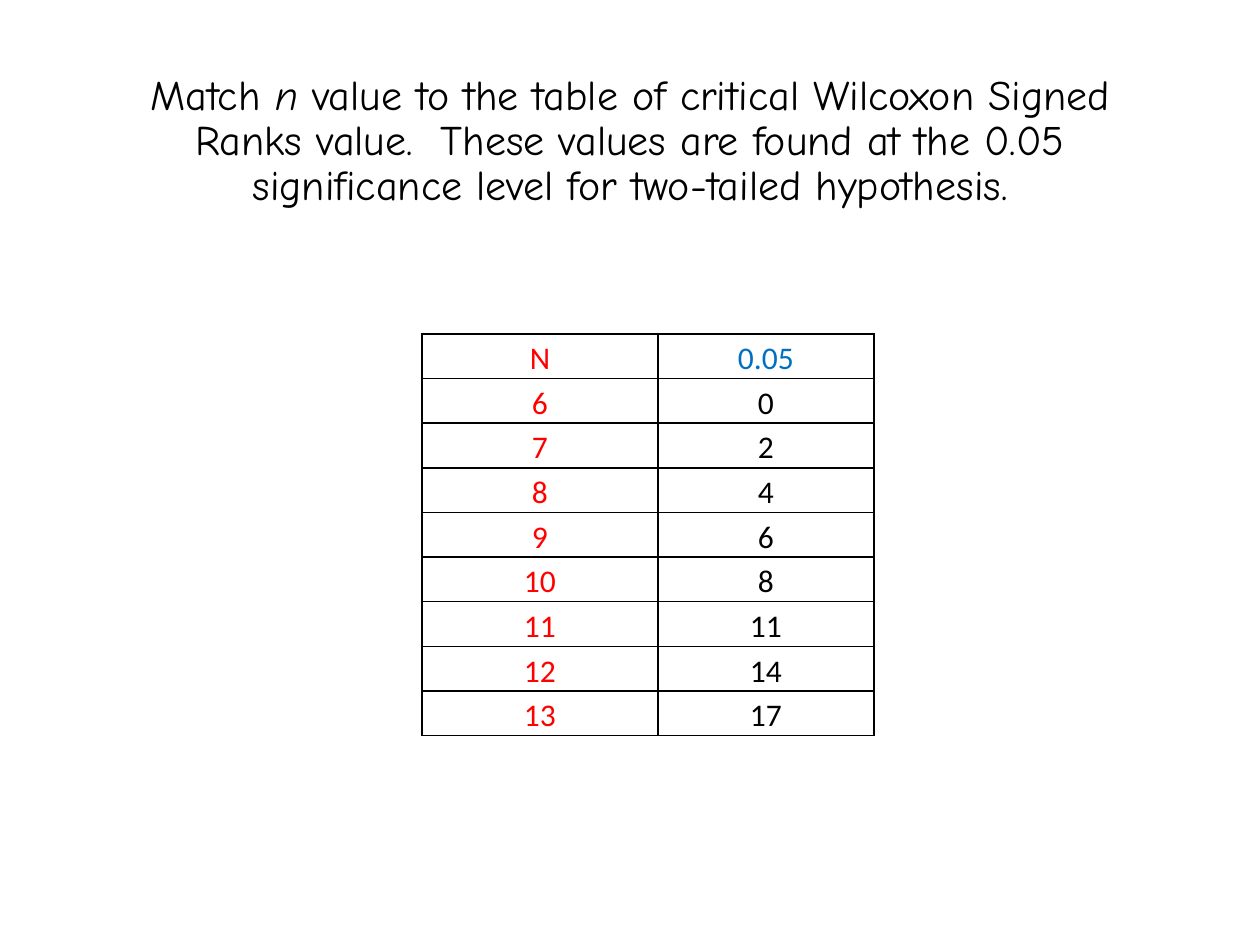
from lxml import etree
from pptx import Presentation
from pptx.dml import color
from pptx.enum import text
from pptx.oxml import ns
from pptx.util import Cm, Pt

COLORS = {"black": "000000", "red": "FF0000", "blue": "0070C0", "white": "FFFFFF"}
CRITICAL_VALUES = [
    ("N", "0.05"),
    ("6", "0"),
    ("7", "2"),
    ("8", "4"),
    ("9", "6"),
    ("10", "8"),
    ("11", "11"),
    ("12", "14"),
    ("13", "17"),
]


def rgb(name):
    return color.RGBColor.from_string(COLORS[name])


def write(para, words, font="Calibri", size=18, tint="black", italic=False):
    span = para.add_run()
    span.text = words
    span.font.name = font
    span.font.size = Pt(size)
    span.font.italic = italic
    span.font.color.rgb = rgb(tint)


def center(para, spacing):
    para.alignment = text.PP_ALIGN.CENTER
    para.line_spacing = spacing


def add_borders(cell, tint="black", width=1):
    properties = cell._tc.get_or_add_tcPr()
    for index, side in enumerate(("lnL", "lnR", "lnT", "lnB")):
        line = etree.Element(ns.qn(f"a:{side}"), w=str(Pt(width)))
        fill = etree.SubElement(line, ns.qn("a:solidFill"))
        etree.SubElement(fill, ns.qn("a:srgbClr"), val=COLORS[tint])
        properties.insert(index, line)


def add_title(page, left, top, width, height):
    box = page.shapes.add_textbox(Cm(left), Cm(top), Cm(width), Cm(height))
    frame = box.text_frame
    frame.word_wrap = True
    frame.vertical_anchor = text.MSO_ANCHOR.MIDDLE
    para = frame.paragraphs[0]
    center(para, 0.9)
    style = {"font": "Comic Neue", "size": 24}
    write(para, "Match ", **style)
    write(para, "n", italic=True, **style)
    write(
        para,
        " value to the table of critical Wilcoxon Signed Ranks value.  These values "
        "are found at the 0.05 significance level for two-tailed hypothesis.",
        **style,
    )


def add_critical_table(page, left, top, widths, row_height):
    row_count = len(CRITICAL_VALUES)
    table = page.shapes.add_table(
        row_count, len(widths), Cm(left), Cm(top),
        Cm(sum(widths)), Cm(row_height * row_count),
    ).table
    table.first_row = False
    table.horz_banding = False
    for column, width in zip(table.columns, widths):
        column.width = Cm(width)
    for row_index, values in enumerate(CRITICAL_VALUES):
        table.rows[row_index].height = Cm(row_height)
        tints = ("red", "black" if row_index else "blue")
        for column_index, (value, tint) in enumerate(zip(values, tints)):
            cell = table.cell(row_index, column_index)
            cell.margin_left = cell.margin_right = Cm(0.18)
            cell.margin_top = cell.margin_bottom = 0
            cell.fill.solid()
            cell.fill.fore_color.rgb = rgb("white")
            add_borders(cell)
            para = cell.text_frame.paragraphs[0]
            center(para, 1.15)
            write(para, value, tint=tint)


def main():
    deck = Presentation()
    deck.slide_width, deck.slide_height = Cm(25.4), Cm(19.05)
    page = deck.slides.add_slide(deck.slide_layouts[6])
    add_critical_table(page, 8.51, 6.73, (4.75, 4.36), 0.9)
    add_title(page, 1.75, 1.02, 21.9, 3.68)
    deck.save("out.pptx")


if __name__ == "__main__":
    main()
